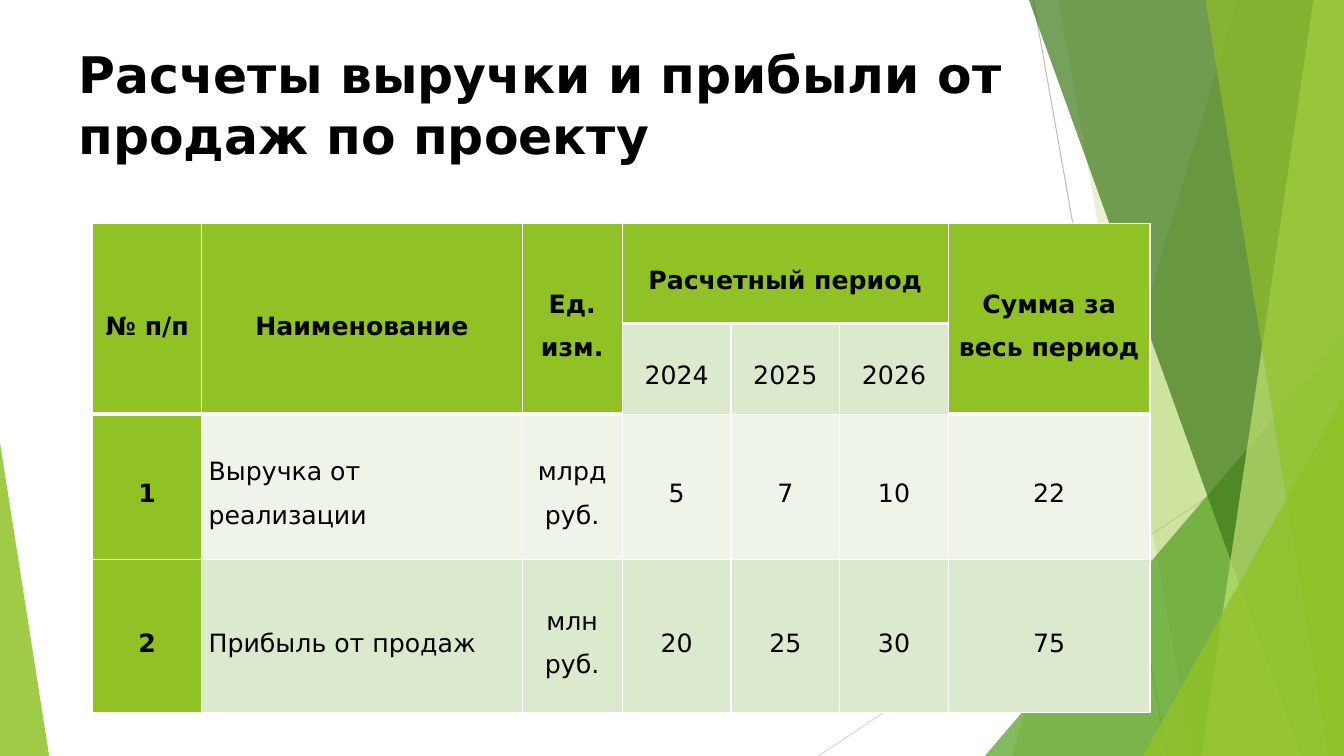
from dataclasses import dataclass

from pptx import Presentation
from pptx.dml.color import RGBColor
from pptx.enum.shapes import MSO_CONNECTOR, MSO_SHAPE
from pptx.enum.text import MSO_ANCHOR, PP_ALIGN
from pptx.oxml.ns import qn
from pptx.oxml.xmlchemy import OxmlElement
from pptx.util import Cm, Pt

WIDTH, HEIGHT = 33.87, 19.05
FONT = "DejaVu Sans"
COLORS = {
    "black": "000000", "white": "FFFFFF", "grey": "BFBFBF", "pale grey": "D9D9D9",
    "lime": "90C226", "green": "54A021", "dark green": "3F7819", "light lime": "C0E474",
    "row light": "EEF4E8", "row dark": "DBE9CD",
}


@dataclass
class Ray:
    start: tuple[float, float]
    end: tuple[float, float]
    color: str


@dataclass
class Band:
    """Area from a slanted left edge to the right side of the slide."""
    top_x: float
    foot_x: float
    color: str
    opacity: int


@dataclass
class Corner:
    """Right triangle standing on the bottom of the slide."""
    left: float
    top: float
    width: float
    apex: float
    color: str
    opacity: int


RAYS = [
    Ray((26.04, 0), (29.41, HEIGHT), "grey"),
    Ray((WIDTH, 10.24), (20.62, HEIGHT), "pale grey"),
]
FACETS = [
    Band(31.19, 25.5, "lime", 30),
    Band(26.67, 30.05, "lime", 20),
    Corner(24.82, 8.46, 9.05, 1, "green", 72),
    Band(25.93, 32.79, "dark green", 70),
    Band(33.1, 30.28, "light lime", 70),
    Band(30.38, 33.48, "lime", 65),
    Corner(28.8, 9.98, 5.07, 1, "lime", 80),
    Corner(0, 11.15, 1.24, 0, "lime", 85),
]

COLUMNS = [2.74, 8.08, 2.52, 2.74, 2.74, 2.74, 5.08]
ROWS = [2.51, 1.73, 3.66, 3.86]
YEARS = range(3, 6)
CELLS = [
    ["№ п/п", "Наименование", "Ед. изм.", "Расчетный период", "", "", "Сумма за весь период"],
    ["", "", "", "2024", "2025", "2026", ""],
    ["1", "Выручка от реализации", "млрд руб.", "5", "7", "10", "22"],
    ["2", "Прибыль от продаж", "млн руб.", "20", "25", "30", "75"],
]


def rgb(name: str) -> RGBColor:
    return RGBColor.from_string(COLORS[name])


def style_text(para, size: float, bold: bool) -> None:
    for span in para.runs:
        span.font.name = FONT
        span.font.size = Pt(size)
        span.font.bold = bold
        span.font.color.rgb = rgb("black")


def draw_ray(page, ray: Ray) -> None:
    line = page.shapes.add_connector(
        MSO_CONNECTOR.STRAIGHT, *map(Cm, ray.start), *map(Cm, ray.end))
    line.line.color.rgb = rgb(ray.color)
    line.line.width = Pt(0.75)
    line.element.spPr.append(OxmlElement("a:effectLst"))


def draw_facet(page, facet: Band | Corner) -> None:
    if isinstance(facet, Band):
        builder = page.shapes.build_freeform(Cm(facet.top_x), 0)
        builder.add_line_segments(
            [(Cm(WIDTH), 0), (Cm(WIDTH), Cm(HEIGHT)), (Cm(facet.foot_x), Cm(HEIGHT))])
        shape = builder.convert_to_shape()
    else:
        shape = page.shapes.add_shape(
            MSO_SHAPE.ISOSCELES_TRIANGLE, Cm(facet.left), Cm(facet.top),
            Cm(facet.width), Cm(HEIGHT - facet.top))
        shape.adjustments[0] = facet.apex
    shape.shadow.inherit = False
    shape.line.fill.background()
    shape.fill.solid()
    shape.fill.fore_color.rgb = rgb(facet.color)
    alpha = OxmlElement("a:alpha")
    alpha.set("val", str(facet.opacity * 1000))
    next(shape.element.spPr.iter(qn("a:srgbClr"))).append(alpha)


def draw_title(page, text: str) -> None:
    box = page.shapes.add_textbox(Cm(1.73), Cm(0.84), Cm(23.88), Cm(3.66))
    frame = box.text_frame
    frame.word_wrap = True
    frame.margin_top = Cm(0.25)
    frame.text = text
    style_text(frame.paragraphs[0], 36, True)


def is_header(row: int, column: int) -> bool:
    return row == 0 or (row == 1 and column not in YEARS)


def add_border(cell, side: str, width: float) -> None:
    line = OxmlElement(f"a:{side}")
    line.set("w", str(Pt(width)))
    fill = OxmlElement("a:solidFill")
    color = OxmlElement("a:srgbClr")
    color.set("val", COLORS["white"])
    fill.append(color)
    line.append(fill)
    cell._tc.get_or_add_tcPr().append(line)


def style_cell(cell, row: int, column: int) -> None:
    header = is_header(row, column)
    under_header = row > 0 and is_header(row - 1, column)
    # Borders: a thick rule below the header
    for side, width in (("lnL", 1), ("lnR", 1), ("lnT", 3 if under_header else 1),
                        ("lnB", 3 if header else 1)):
        add_border(cell, side, width)
    # Fill
    cell.fill.solid()
    banding = "row light" if row == 2 else "row dark"
    cell.fill.fore_color.rgb = rgb("lime" if header or column == 0 else banding)
    # Text
    cell.vertical_anchor = MSO_ANCHOR.MIDDLE
    cell.margin_left = cell.margin_right = Cm(0.18)
    cell.margin_top = cell.margin_bottom = 0
    para = cell.text_frame.paragraphs[0]
    para.text = CELLS[row][column]
    para.line_spacing = 1.5
    para.alignment = PP_ALIGN.LEFT if column == 1 and not header else PP_ALIGN.CENTER
    style_text(para, 18, header or column == 0)


def draw_table(page) -> None:
    table = page.shapes.add_table(
        len(ROWS), len(COLUMNS), Cm(2.34), Cm(5.64), Cm(sum(COLUMNS)), Cm(sum(ROWS))).table
    table.first_row = table.horz_banding = False
    for column, width in zip(table.columns, COLUMNS):
        column.width = Cm(width)
    for row, height in zip(table.rows, ROWS):
        row.height = Cm(height)
    for row in range(len(ROWS)):
        for column in range(len(COLUMNS)):
            style_cell(table.cell(row, column), row, column)
    # Header spans
    table.cell(0, YEARS[0]).merge(table.cell(0, YEARS[-1]))
    for column in range(len(COLUMNS)):
        if column not in YEARS:
            table.cell(0, column).merge(table.cell(1, column))


def main() -> None:
    deck = Presentation()
    deck.slide_width, deck.slide_height = Cm(WIDTH), Cm(HEIGHT)
    page = deck.slides.add_slide(deck.slide_layouts[6])
    # Background facets
    for ray in RAYS:
        draw_ray(page, ray)
    for facet in FACETS:
        draw_facet(page, facet)
    # Content
    draw_title(page, "Расчеты выручки и прибыли от продаж по проекту")
    draw_table(page)
    deck.save("out.pptx")


if __name__ == "__main__":
    main()
